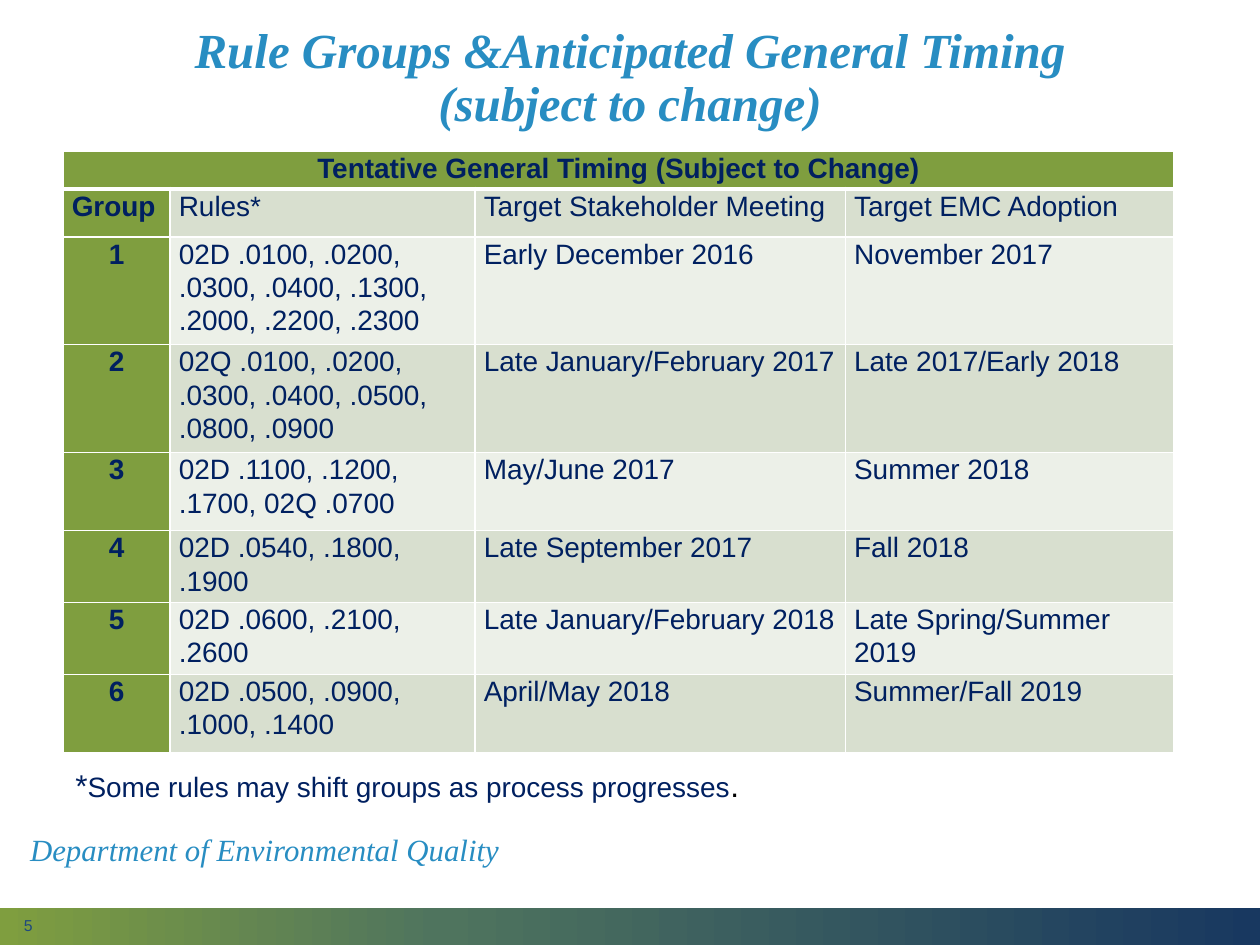
from copy import deepcopy

from lxml.etree import SubElement
from pptx import Presentation
from pptx.dml.color import RGBColor
from pptx.enum.shapes import MSO_SHAPE as Shape
from pptx.enum.text import MSO_ANCHOR as Anchor, MSO_AUTO_SIZE as Auto, PP_ALIGN as Align
from pptx.oxml import parse_xml
from pptx.oxml.ns import nsdecls, qn
from pptx.util import Inches, Pt

# Content
TITLE = "Rule Groups &Anticipated General Timing\v(subject to change)"
BANNER = "Tentative General Timing (Subject to Change)"
ROWS = [
    ("Group", "Rules*", "Target Stakeholder Meeting", "Target EMC Adoption"),
    ("1", "02D .0100, .0200, .0300, .0400, .1300, .2000, .2200, .2300",
     "Early December 2016", "November 2017"),
    ("2", "02Q .0100, .0200, .0300, .0400, .0500, .0800, .0900",
     "Late January/February 2017", "Late 2017/Early 2018"),
    ("3", "02D .1100, .1200, .1700, 02Q .0700", "May/June 2017", "Summer 2018"),
    ("4", "02D .0540, .1800, .1900", "Late September 2017", "Fall 2018"),
    ("5", "02D .0600, .2100, .2600",
     "Late January/February 2018", "Late Spring/Summer 2019"),
    ("6", "02D .0500, .0900, .1000, .1400", "April/May 2018", "Summer/Fall 2019"),
]
DEPT = "Department of Environmental Quality"
PAGE = "5"

# Style
SANS, SERIF = "Arial", "Times New Roman"
NAVY = RGBColor(0x00, 0x20, 0x60)
BLUE = RGBColor(0x28, 0x8D, 0xC2)
SLATE = RGBColor(0x1F, 0x49, 0x7D)
BLACK = RGBColor(0, 0, 0)
GREEN = RGBColor(0x7F, 0x9E, 0x3F)
BANDS = [RGBColor(0xD8, 0xDF, 0xCF), RGBColor(0xEC, 0xF0, 0xE8)]
STOPS = [(0, GREEN), (0.35, RGBColor(0x4F, 0x74, 0x5E)),
         (1, RGBColor(0x18, 0x38, 0x60))]
NOTE = [("*", 18, NAVY),
        ("Some rules may shift groups as process progresses", 16, NAVY),
        (".", 18, BLACK)]

# Grid, in inches
WIDTHS = [0.85, 2.42, 2.94, 2.61]
HEIGHTS = [0.3, 0.38, 0.85, 0.62, 0.62, 0.48, 0.36, 0.62]


def style(run, size, color, face=SANS, bold=False, slant=False):
    font = run.font
    font.name, font.size, font.bold, font.italic = face, Pt(size), bold, slant
    font.color.rgb = color


def box(slide, at, parts, face=SANS, slant=False):
    """Add a text box whose one paragraph is made of (text, size, colour) parts."""
    frame = slide.shapes.add_textbox(*map(Inches, at)).text_frame
    frame.word_wrap = True
    frame.vertical_anchor = Anchor.MIDDLE
    for text, size, color in parts:
        run = frame.paragraphs[0].add_run()
        run.text = text
        style(run, size, color, face, slant=slant)
    return frame


def rule(cell, base):
    """Draw white cell borders; base is the width of the lower one in points."""
    props = cell._tc.get_or_add_tcPr()
    for i, (side, width) in enumerate(zip("LRTB", (1, 1, 1, base))):
        line = parse_xml(
            f'<a:ln{side} {nsdecls("a")} w="{Pt(width)}"><a:solidFill>'
            f'<a:srgbClr val="FFFFFF"/></a:solidFill></a:ln{side}>')
        props.insert(i, line)


def fill_cell(cell, text, fill, bold, mid, base=1):
    cell.margin_left = cell.margin_right = Inches(0.07)
    cell.margin_top = cell.margin_bottom = 0
    cell.fill.solid()
    cell.fill.fore_color.rgb = fill
    rule(cell, base)
    cell.text_frame.text = text
    para = cell.text_frame.paragraphs[0]
    para.line_spacing = 1.07
    para.alignment = Align.CENTER if mid else Align.LEFT
    for run in para.runs:
        style(run, 16, NAVY, bold=bold)


def add_bar(slide):
    bar = slide.shapes.add_shape(Shape.RECTANGLE, 0, Inches(7.21),
                                 Inches(10), Inches(0.3))
    bar.shadow.inherit = False
    bar.line.fill.background()
    bar.fill.gradient()
    bar.fill.gradient_angle = 0
    stops = bar._element.spPr.find(".//" + qn("a:gsLst"))
    stops.insert(1, deepcopy(stops[0]))
    for stop, (place, color) in zip(bar.fill.gradient_stops, STOPS):
        stop.position = place
        stop.color.rgb = color


def add_title(slide):
    title = slide.shapes.title
    title.left, title.top, title.width, title.height = map(
        Inches, (0.69, 0.05, 8.62, 1.16))
    frame = title.text_frame
    frame.text = TITLE
    frame.vertical_anchor = Anchor.MIDDLE
    para = frame.paragraphs[0]
    para.alignment = Align.CENTER
    para.line_spacing = 0.9
    for run in para.runs:
        style(run, 28, BLUE, SERIF, bold=True, slant=True)


def add_grid(slide):
    grid = slide.shapes.add_table(
        len(HEIGHTS), len(WIDTHS), Inches(0.5), Inches(1.2),
        Inches(sum(WIDTHS)), Inches(sum(HEIGHTS))).table
    for col, width in zip(grid.columns, WIDTHS):
        col.width = Inches(width)
    for row, height in zip(grid.rows, HEIGHTS):
        row.height = Inches(height)
    # Banner over all columns
    for c in range(len(WIDTHS)):
        fill_cell(grid.cell(0, c), "" if c else BANNER, GREEN, True, True, base=3)
    grid.cell(0, 0).merge(grid.cell(0, len(WIDTHS) - 1))
    # Heading row and groups, in alternating bands
    for r, row in enumerate(ROWS):
        for c, text in enumerate(row):
            first = c == 0
            fill_cell(grid.cell(r + 1, c), text, GREEN if first else BANDS[r % 2],
                      bold=first, mid=first and r > 0)


def main():
    deck = Presentation()
    deck.slide_width, deck.slide_height = Inches(10), Inches(7.5)
    slide = deck.slides.add_slide(deck.slide_layouts[5])
    add_bar(slide)
    add_title(slide)
    # Page number and department
    box(slide, (0.09, 7.27, 2.25, 0.15), [(PAGE, 9, SLATE)])
    dept = box(slide, (0.14, 6.56, 4.1, 0.4), [(DEPT, 17.6, BLUE)], SERIF, slant=True)
    dept.paragraphs[0].line_spacing = 0.9
    add_grid(slide)
    # Footnote
    note = box(slide, (0.5, 6.03, 7.3, 0.4), NOTE)
    note.vertical_anchor = Anchor.TOP
    note.auto_size = Auto.SHAPE_TO_FIT_TEXT
    deck.save("out.pptx")


if __name__ == "__main__":
    main()
